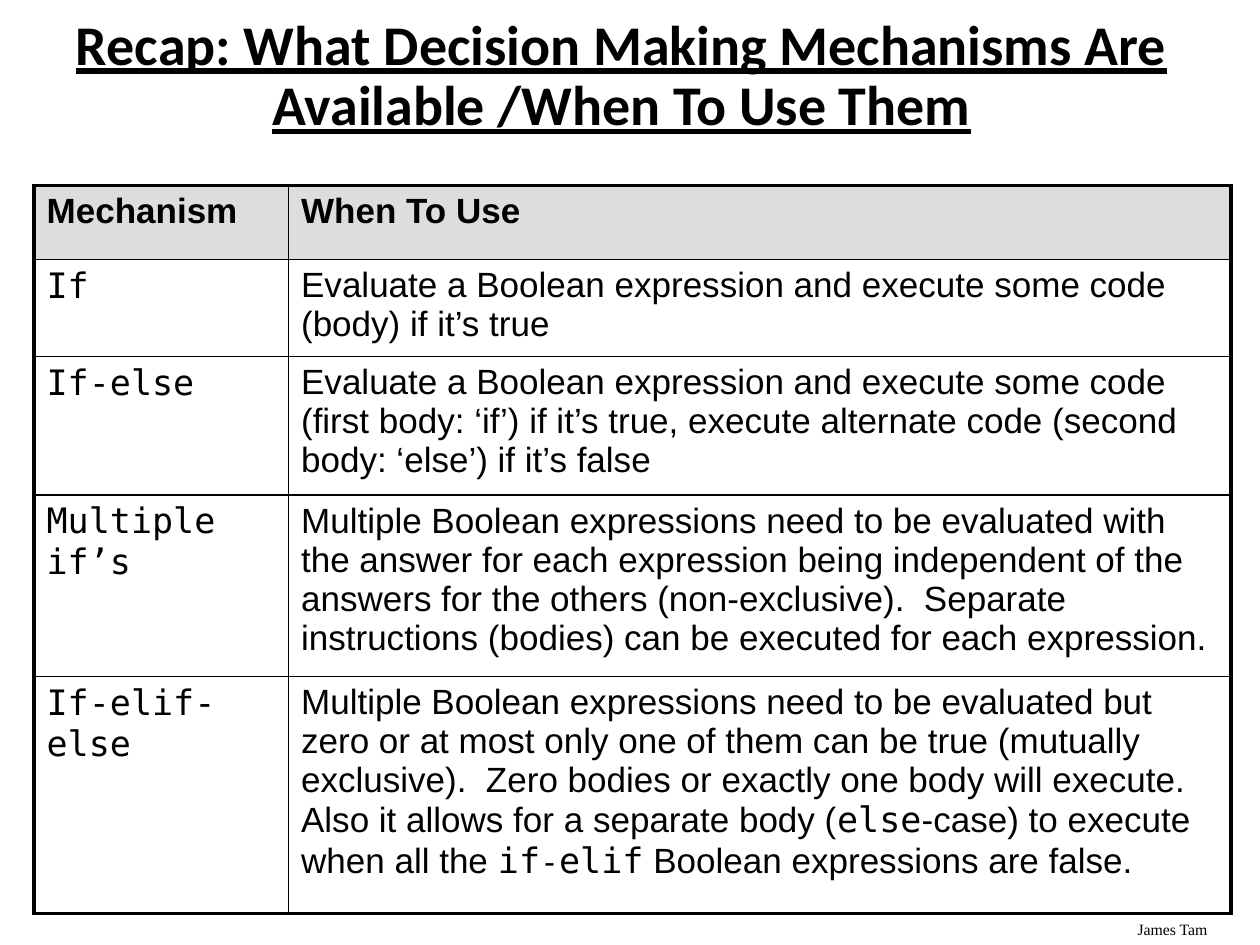
from dataclasses import dataclass

from lxml import etree
from pptx import Presentation
from pptx.dml import color
from pptx.enum import text
from pptx.oxml import ns
from pptx.util import Pt


@dataclass(frozen=True)
class Theme:
    ink: str = "000000"
    header_fill: str = "DDDDDD"
    title_font: str = "Calibri"
    body_font: str = "Arial"
    code_font: str = "DejaVu Sans Mono"
    footer_font: str = "Times New Roman"
    title_size: float = 32
    body_size: float = 20
    hyphen_size: float = 18
    footer_size: float = 9
    outer_line: float = 2.25
    inner_line: float = 1


theme = Theme()


def add_run(paragraph, words, font=theme.body_font, size=theme.body_size,
            bold=False, underline=False):
    run = paragraph.add_run()
    run.text = words
    run.font.name = font
    run.font.size = Pt(size)
    run.font.bold = bold
    run.font.underline = underline
    run.font.color.rgb = color.RGBColor.from_string(theme.ink)


def add_border(cell, side, width):
    properties = cell._tc.get_or_add_tcPr()
    line = etree.SubElement(properties, ns.qn(f"a:ln{side}"), w=str(Pt(width)))
    fill = etree.SubElement(line, ns.qn("a:solidFill"))
    etree.SubElement(fill, ns.qn("a:srgbClr"), val=theme.ink)


presentation = Presentation()
presentation.slide_width = Pt(720)
presentation.slide_height = Pt(540)
slide = presentation.slides.add_slide(presentation.slide_layouts[5])

# Title
title = slide.shapes.title
title.left, title.top, title.width, title.height = Pt(33.84), Pt(23.76), Pt(642.96), Pt(41.04)
title.text_frame.auto_size = text.MSO_AUTO_SIZE.NONE
title.text_frame.word_wrap = True
title.text_frame.vertical_anchor = text.MSO_ANCHOR.MIDDLE
paragraph = title.text_frame.paragraphs[0]
paragraph.alignment = text.PP_ALIGN.CENTER
paragraph.line_spacing = 0.9
add_run(paragraph, "Recap: What Decision Making Mechanisms Are Available /When To Use Them",
        font=theme.title_font, size=theme.title_size, bold=True, underline=True)

# Table content: each description is a list of (words, format) runs
code = {"font": theme.code_font}
header = {"bold": True}
rows = [
    (42.48, [("Mechanism", header)], [("When To Use", header)]),
    (55.44, [("If", code)],
     [("Evaluate a Boolean expression and execute some code (body) if it’s true", {})]),
    (79.2, [("If-else", code)],
     [("Evaluate a Boolean expression and execute some code (first body: ‘if’) if it’s true, "
       "execute alternate code (second body: ‘else’) if it’s false", {})]),
    (103.68, [("Multiple if’s", code)],
     [("Multiple Boolean expressions need to be evaluated with the answer for each expression "
       "being independent of the answers for the others (non-exclusive).  Separate instructions "
       "(bodies) can be executed for each expression.", {})]),
    (135.36, [("If-elif-else", code)],
     [("Multiple Boolean expressions need to be evaluated but zero or at most only one of them "
       "can be true (mutually exclusive).  Zero bodies or exactly one body will execute. "
       "Also it allows for a separate body (", {}),
      ("else", code),
      ("-case) to execute when all the ", {}),
      ("if", code),
      ("-", {**code, "size": theme.hyphen_size}),
      ("elif", code),
      (" Boolean expressions are false.", {})]),
]
column_widths = [145.44, 538.56]

# Table
table = slide.shapes.add_table(
    len(rows), len(column_widths), Pt(19.44), Pt(105.84),
    Pt(sum(column_widths)), Pt(sum(row[0] for row in rows))).table
table.first_row = False
table.horz_banding = False
for column, width in zip(table.columns, column_widths):
    column.width = Pt(width)

last_row, last_column = len(rows) - 1, len(column_widths) - 1
for row_index, (height, *contents) in enumerate(rows):
    table.rows[row_index].height = Pt(height)
    for column_index, runs in enumerate(contents):
        cell = table.cell(row_index, column_index)
        for words, style in runs:
            add_run(cell.text_frame.paragraphs[0], words, **style)

        # Heavy frame outside, thin rules inside
        outer_sides = {"L": column_index == 0, "R": column_index == last_column,
                       "T": row_index == 0, "B": row_index == last_row}
        for side, is_outer in outer_sides.items():
            add_border(cell, side, theme.outer_line if is_outer else theme.inner_line)

        if row_index == 0:
            cell.fill.solid()
            cell.fill.fore_color.rgb = color.RGBColor.from_string(theme.header_fill)
        else:
            cell.fill.background()

# Author's name in the corner
author = slide.shapes.add_textbox(Pt(642.96), Pt(522), Pt(72), Pt(18))
author.text_frame.word_wrap = True
add_run(author.text_frame.paragraphs[0], "James Tam",
        font=theme.footer_font, size=theme.footer_size)

presentation.save("out.pptx")
